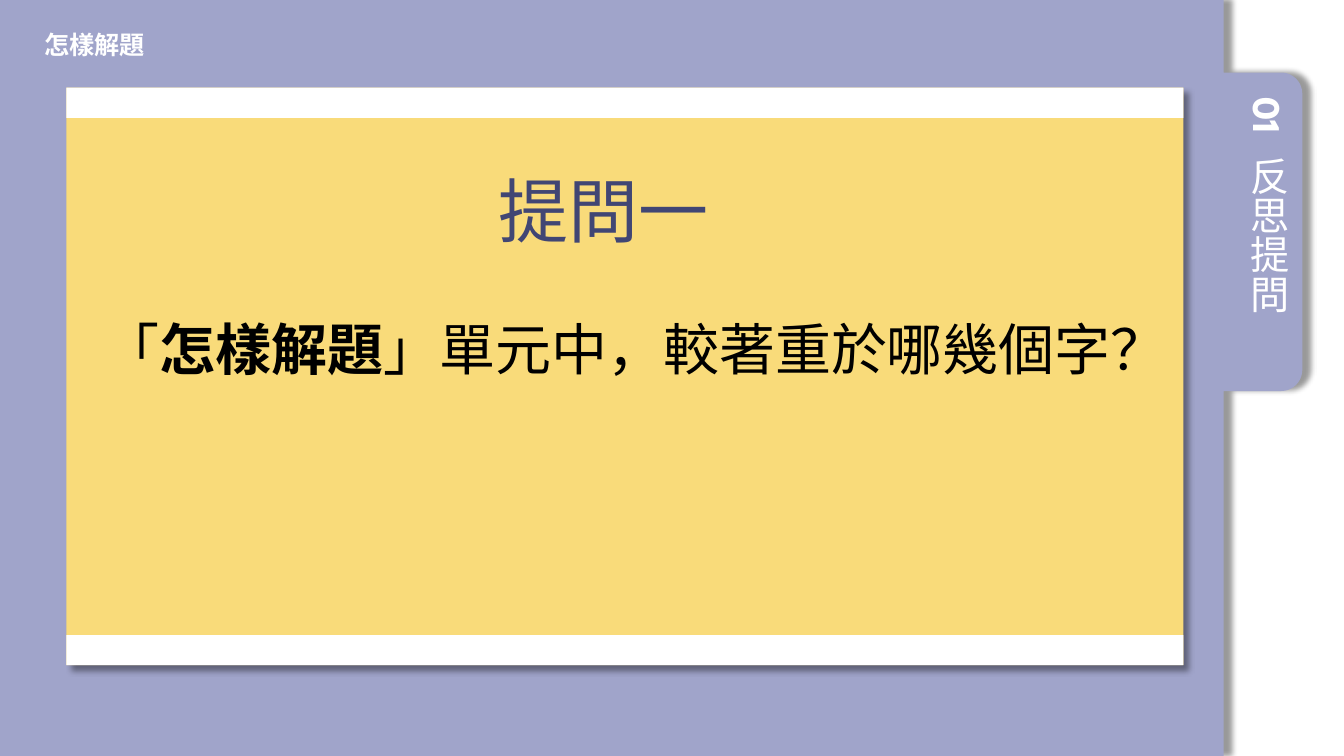
from math import cos, radians, sin

from lxml.etree import SubElement
from pptx import Presentation
from pptx.dml.color import RGBColor
from pptx.enum.shapes import MSO_SHAPE as Shape
from pptx.enum.text import MSO_ANCHOR as Anchor, MSO_AUTO_SIZE as AutoSize, PP_ALIGN as Align
from pptx.oxml.ns import qn
from pptx.util import Emu, Inches, Pt

WIDTH, HEIGHT = Inches(13.333), Inches(7.5)
LILAC, YELLOW, WHITE, INK, BLACK = "A0A4CA", "F9DB7A", "FFFFFF", "414674", "000000"
SANS, DISPLAY = "Noto Sans CJK SC", "League Spartan"


def color(code):
    return RGBColor.from_string(code)


def across(share):
    return Emu(round(WIDTH * share / 100))


def down(share):
    return Emu(round(HEIGHT * share / 100))


def write(para, text, font=SANS, size=28, fill=WHITE, bold=False):
    span = para.add_run()
    span.text = text
    span.font.name, span.font.size, span.font.bold = font, Pt(size), bold
    span.font.color.rgb = color(fill)
    SubElement(span.font._element, qn("a:ea")).set("typeface", font)


class SlideBuilder:
    """Places elements by percentages of the slide's width and height."""

    def __init__(self, deck):
        self.slide = deck.slides.add_slide(deck.slide_layouts[1])
        self.shapes = self.slide.shapes

    def finish(self, shape, fill, angle=None):
        shape.fill.solid()
        shape.fill.fore_color.rgb = color(fill)
        shape.line.fill.background()
        shape.shadow.inherit = False
        if angle is not None:
            effects = shape._element.spPr.find(qn("a:effectLst"))
            shadow = SubElement(effects, qn("a:outerShdw"), blurRad=str(Pt(4)), dist=str(Pt(6)),
                                dir=str(angle * 60000), algn="tl", rotWithShape="0")
            tint = SubElement(shadow, qn("a:srgbClr"), val=BLACK)
            SubElement(tint, qn("a:alpha"), val="40000")

    def rectangle(self, left, top, width, height, fill, angle=None):
        box = self.shapes.add_shape(Shape.RECTANGLE, across(left), down(top), across(width), down(height))
        self.finish(box, fill, angle)

    def outline(self, points, fill, angle):
        builder = self.shapes.build_freeform(*points[0])
        builder.add_line_segments(points[1:], close=True)
        self.finish(builder.convert_to_shape(), fill, angle)

    def text(self, left, top, width, height, spans, placeholder=None, align=Align.LEFT,
             spacing=1.0, before=0, vertical=False, anchor=Anchor.TOP):
        place = across(left), down(top), across(width), down(height)
        if placeholder is None:
            box = self.shapes.add_textbox(*place)
        else:
            box = self.slide.placeholders[placeholder]
            box.left, box.top, box.width, box.height = place
            self.shapes._spTree.append(box._element)  # bring to the front
        frame = box.text_frame
        frame.word_wrap, frame.auto_size, frame.vertical_anchor = True, AutoSize.NONE, anchor
        if vertical:
            frame._txBody.bodyPr.set("vert", "eaVert")
        para = frame.paragraphs[0]
        para.alignment, para.line_spacing, para.space_before = align, spacing, Pt(before)
        properties = para._p.get_or_add_pPr()
        properties.set("marL", "0")
        properties.set("indent", "0")
        SubElement(properties, qn("a:buNone"))
        for words, style in spans:
            write(para, words, **style)


def panel_points(edge=91.05, tab_right=96.9, tab_top=9.6, tab_bottom=51.73):
    """Background panel with a rounded tab on its right side."""
    right, top, bottom, radius = across(tab_right), down(tab_top), down(tab_bottom), Inches(0.21)

    def corner(center_y, start):
        return [(round(right - radius + radius * cos(radians(turn))),
                 round(center_y + radius * sin(radians(turn))))
                for turn in range(start, start + 91, 6)]

    return [(0, 0), (across(edge), 0), (across(edge), top),
            *corner(top + radius, -90), *corner(bottom - radius, 0),
            (across(edge), bottom), (across(edge), HEIGHT), (0, HEIGHT)]


def main():
    deck = Presentation()
    deck.slide_width, deck.slide_height = WIDTH, HEIGHT
    page = SlideBuilder(deck)

    # Panel, tab labels and header
    page.outline(panel_points(), LILAC, angle=0)
    label = dict(spacing=0.9, before=10)
    page.text(91.2, 19.47, 4.95, 31.73, [("反思提問", {})], vertical=True, **label)
    page.text(91.2, 11.6, 4.95, 7.87, [("01", dict(font=DISPLAY, bold=True))], vertical=True, **label)
    page.text(2.55, 3.47, 32.32, 5.2, [("怎樣解題", dict(font=DISPLAY, size=18, bold=True))],
              anchor=Anchor.MIDDLE, **label)

    # Card with white bands at top and bottom
    left, top, width, height, band = 4.95, 11.6, 83.1, 76.4, 4
    page.rectangle(left, top, width, height, YELLOW, angle=45)
    for band_top in (top, top + height - band):
        page.rectangle(left, band_top, width, band, WHITE)

    # Question
    page.text(34.87, 21.47, 20.1, 12.53, [("提問一", dict(size=50, fill=INK))],
              placeholder=0, align=Align.CENTER)
    plain = dict(size=40, fill=BLACK)
    page.text(6.97, 38.27, 77.48, 11.87,
              [("「", plain), ("怎樣解題", dict(plain, bold=True)), ("」單元中，較著重於哪幾個字？", plain)],
              placeholder=1, spacing=1.3)

    deck.save("out.pptx")


if __name__ == "__main__":
    main()
